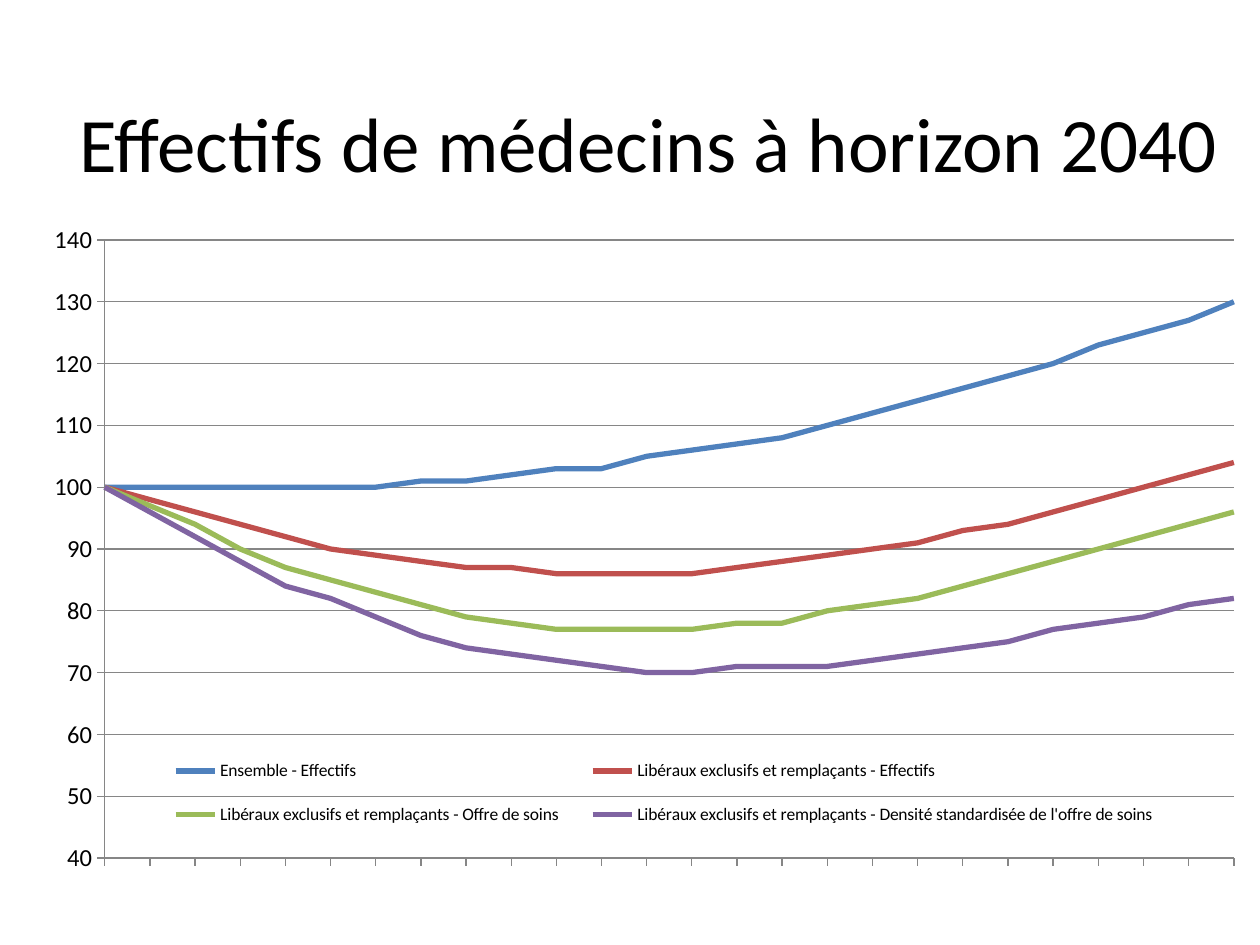
from lxml import etree
from pptx import Presentation, util as u
from pptx.chart.data import CategoryChartData
from pptx.dml.color import RGBColor
from pptx.enum import chart as ch, text
from pptx.oxml import ns

BLACK = RGBColor(0, 0, 0)
GRAY = RGBColor(0x86, 0x86, 0x86)
BLUE = RGBColor(0x4F, 0x81, 0xBD)
RED = RGBColor(0xC0, 0x50, 0x4D)
GREEN = RGBColor(0x9B, 0xBB, 0x59)
PURPLE = RGBColor(0x80, 0x64, 0xA2)

FREE = "Libéraux exclusifs et remplaçants - "
SERIES = [
    ("Ensemble - Effectifs", BLUE,
     [100, 100, 100, 100, 100, 100, 100, 101, 101, 102, 103, 103, 105,
      106, 107, 108, 110, 112, 114, 116, 118, 120, 123, 125, 127, 130]),
    (FREE + "Effectifs", RED,
     [100, 98, 96, 94, 92, 90, 89, 88, 87, 87, 86, 86, 86,
      86, 87, 88, 89, 90, 91, 93, 94, 96, 98, 100, 102, 104]),
    (FREE + "Offre de soins", GREEN,
     [100, 97, 94, 90, 87, 85, 83, 81, 79, 78, 77, 77, 77,
      77, 78, 78, 80, 81, 82, 84, 86, 88, 90, 92, 94, 96]),
    (FREE + "Densité standardisée de l'offre de soins", PURPLE,
     [100, 96, 92, 88, 84, 82, 79, 76, 74, 73, 72, 71, 70,
      70, 71, 71, 71, 72, 73, 74, 75, 77, 78, 79, 81, 82]),
]


class Deck:
    """Holds the style and the current slide, and draws each kind of element."""

    font = "Calibri"
    scale = 914400 / 126

    def __init__(self, wide, high):
        self.prs = Presentation()
        self.prs.slide_width, self.prs.slide_height = self.emu(wide, high)
        self.slide = self.prs.slides.add_slide(self.prs.slide_layouts[6])

    def emu(self, *sizes):
        return [u.Emu(round(size * self.scale)) for size in sizes]

    def title(self, words, box, size):
        frame = self.slide.shapes.add_textbox(*self.emu(*box)).text_frame
        frame.word_wrap = True
        frame.vertical_anchor = text.MSO_ANCHOR.MIDDLE
        frame.text = words
        para = frame.paragraphs[0]
        para.alignment = text.PP_ALIGN.CENTER
        font = para.runs[0].font
        font.name, font.size, font.color.rgb = self.font, u.Pt(size), BLACK

    def swap(self, root, tag, after=None, **attrs):
        for old in root.findall(ns.qn(tag)):
            root.remove(old)
        node = etree.Element(ns.qn(tag), **attrs)
        if after:
            root.find(ns.qn(after)).addnext(node)
        else:
            root.insert(0, node)
        return node

    def place(self, root, after, inner, **sides):
        layout = self.swap(root, "c:layout", after)
        manual = etree.SubElement(layout, ns.qn("c:manualLayout"))
        parts = [("layoutTarget", "inner")] if inner else []
        parts += [("xMode", "edge"), ("yMode", "edge"), *sides.items()]
        for tag, val in parts:
            etree.SubElement(manual, ns.qn("c:" + tag), val=str(val))

    def stroke(self, line, color, width):
        line.color.rgb, line.width = color, u.Pt(width)

    def lines(self, years, series, box):
        data = CategoryChartData(number_format="#,##0")
        data.categories = [str(year) for year in years]
        for name, _, vals in series:
            data.add_series(name, vals)
        chart = self.slide.shapes.add_chart(
            ch.XL_CHART_TYPE.LINE, *self.emu(*box), data).chart
        chart.has_title = False
        font = chart.font
        font.name, font.size, font.color.rgb = self.font, u.Pt(10), BLACK
        chart.plots[0].vary_by_categories = False
        for line, (_, color, _) in zip(chart.plots[0].series, series):
            line.smooth = False
            line.marker.style = ch.XL_MARKER_STYLE.NONE
            self.stroke(line.format.line, color, 3)
        self.axes(chart)
        self.legend(chart)
        self.place(chart.value_axis._element.getparent(), None, True,
                   x=0.056, y=0.029, w=0.907, h=0.896)

    def axes(self, chart):
        cat, val = chart.category_axis, chart.value_axis
        for axis, size in (cat, 16), (val, 14):
            axis.major_tick_mark = ch.XL_TICK_MARK.OUTSIDE
            axis.minor_tick_mark = ch.XL_TICK_MARK.NONE
            axis.tick_labels.font.size = u.Pt(size)
            self.stroke(axis.format.line, GRAY, 0.75)
        cat.tick_label_position = ch.XL_TICK_LABEL_POSITION.NONE
        val.minimum_scale, val.maximum_scale, val.major_unit = 40, 140, 10
        val.tick_labels.number_format = "#,##0"
        val.tick_labels.number_format_is_linked = False
        val.has_major_gridlines = True
        self.stroke(val.major_gridlines.format.line, GRAY, 0.75)
        self.swap(val._element, "c:crossBetween", "c:crosses", val="midCat")

    def legend(self, chart):
        chart.has_legend = True
        key = chart.legend
        key.position = ch.XL_LEGEND_POSITION.BOTTOM
        key.include_in_layout = False
        key.font.size = u.Pt(10)
        self.place(key._element, "c:legendPos", False,
                   x=0.09, y=0.75, w=0.83, h=0.16)


def main():
    deck = Deck(1260, 945)
    deck.title("Effectifs de médecins à horizon 2040", (63, 63, 1172, 158), 44)
    deck.lines(range(2015, 2041), SERIES, (35, 220, 1245, 690))
    deck.prs.save("out.pptx")


if __name__ == "__main__":
    main()
